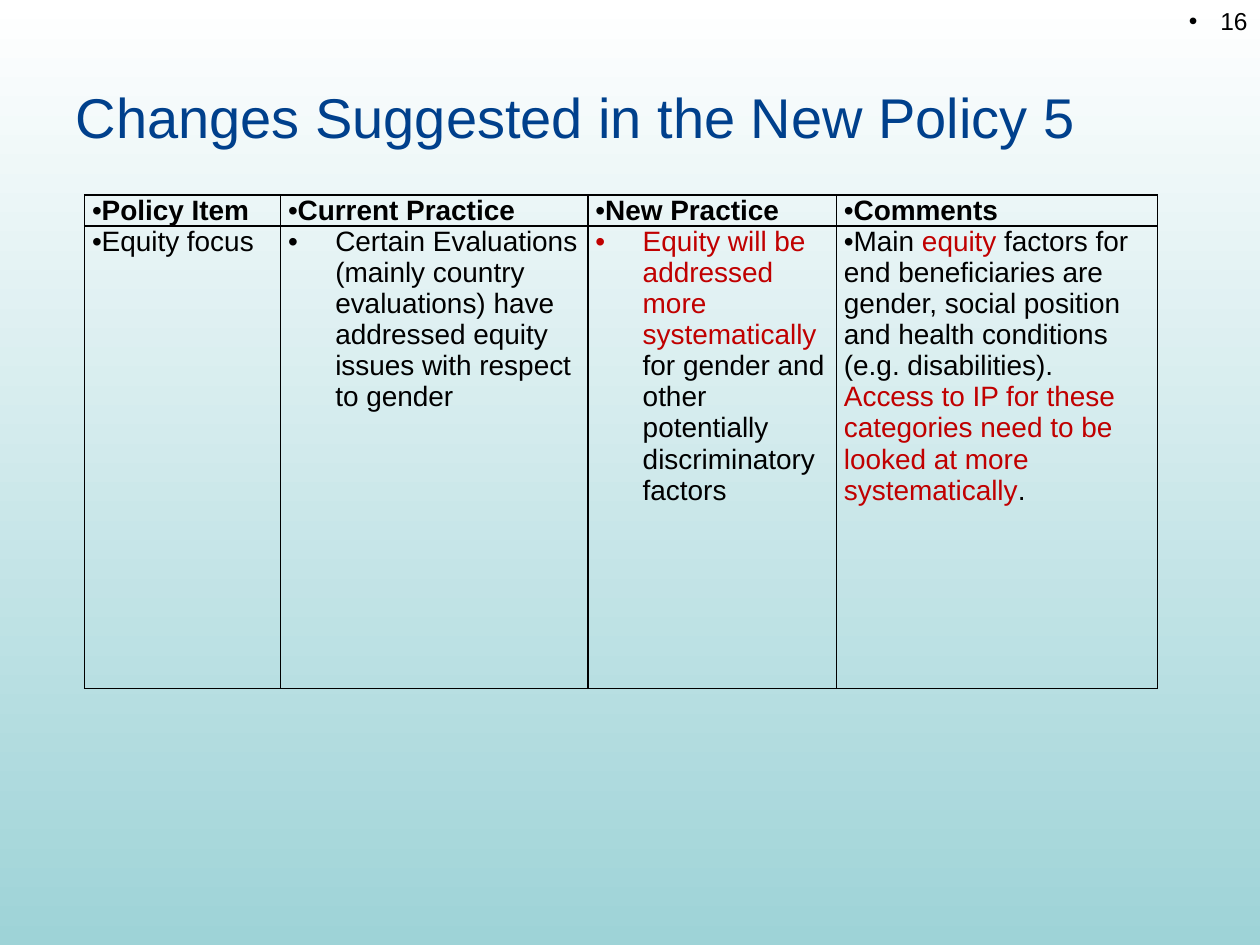
from dataclasses import dataclass

from lxml.etree import SubElement
from pptx import Presentation
from pptx.dml.color import RGBColor
from pptx.enum.text import MSO_ANCHOR as Anchor, MSO_AUTO_SIZE as AutoSize, PP_ALIGN as Align
from pptx.oxml.ns import qn
from pptx.util import Pt

BLACK = RGBColor(0x00, 0x00, 0x00)
RED = RGBColor(0xC0, 0x00, 0x00)
NAVY = RGBColor(0x00, 0x40, 0x8C)
TEAL = RGBColor(0x9E, 0xD3, 0xD7)
WHITE = RGBColor(0xFF, 0xFF, 0xFF)

FONT = "Arial"
COLUMN_WIDTHS = (112, 175.7, 142, 183.5)
ROW_HEIGHTS = (17.7, 264.2)
HANGING_INDENT = 27


@dataclass(frozen=True)
class TextRun:
    text: str
    color: RGBColor = BLACK
    bold: bool = False


@dataclass(frozen=True)
class CellText:
    runs: tuple[TextRun, ...]
    indent: float = 0


HEADERS = tuple(
    CellText((TextRun(label, bold=True),))
    for label in ("Policy Item", "Current Practice", "New Practice", "Comments")
)
EQUITY_ROW = (
    CellText((TextRun("Equity focus"),)),
    CellText(
        (
            TextRun(
                "Certain Evaluations (mainly country evaluations) have "
                "addressed equity issues with respect to gender"
            ),
        ),
        HANGING_INDENT,
    ),
    CellText(
        (
            TextRun("Equity will be addressed more systematically ", RED),
            TextRun("for gender and other potentially discriminatory factors "),
        ),
        HANGING_INDENT,
    ),
    CellText(
        (
            TextRun("Main "),
            TextRun("equity", RED),
            TextRun(
                " factors for end beneficiaries are gender, social position "
                "and health conditions (e.g. disabilities). "
            ),
            TextRun(
                "Access to IP for these categories need to be looked at more systematically",
                RED,
            ),
            TextRun("."),
        )
    ),
)


def add_run(paragraph, text_run: TextRun, size: float) -> None:
    run = paragraph.add_run()
    run.text = text_run.text
    run.font.name = FONT
    run.font.size = Pt(size)
    run.font.bold = text_run.bold
    run.font.color.rgb = text_run.color


def add_bullet(paragraph, indent: float) -> None:
    properties = paragraph._p.get_or_add_pPr()
    properties.set("marL", str(Pt(indent)))
    properties.set("indent", str(-Pt(indent)))
    SubElement(properties, qn("a:buFont"), typeface=FONT)
    SubElement(properties, qn("a:buChar"), char="•")


def add_borders(cell) -> None:
    properties = cell._tc.get_or_add_tcPr()
    for position, side in enumerate(("lnL", "lnR", "lnT", "lnB")):
        line = SubElement(properties, qn(f"a:{side}"), w=str(Pt(1)))
        fill = SubElement(line, qn("a:solidFill"))
        SubElement(fill, qn("a:srgbClr"), val=str(BLACK))
        properties.insert(position, line)


def fill_cell(cell, content: CellText) -> None:
    cell.fill.background()
    add_borders(cell)
    cell.margin_left = cell.margin_right = Pt(4.3)
    cell.margin_top = cell.margin_bottom = Pt(0)
    cell.vertical_anchor = Anchor.TOP
    paragraph = cell.text_frame.paragraphs[0]
    paragraph.alignment = Align.LEFT
    add_bullet(paragraph, content.indent)
    for text_run in content.runs:
        add_run(paragraph, text_run, 16)


def set_background(slide) -> None:
    fill = slide.background.fill
    fill.gradient()
    fill.gradient_angle = 90
    for stop, position, color in zip(fill.gradient_stops, (0, 1), (TEAL, WHITE)):
        stop.position = position
        stop.color.rgb = color


def set_title(slide) -> None:
    title = slide.shapes.title
    title.left, title.top, title.width, title.height = Pt(36), Pt(21.6), Pt(648), Pt(90)
    frame = title.text_frame
    frame.auto_size = AutoSize.NONE
    frame.vertical_anchor = Anchor.MIDDLE
    paragraph = frame.paragraphs[0]
    paragraph.alignment = Align.LEFT
    add_run(paragraph, TextRun("Changes Suggested in the New Policy 5", NAVY), 32)


def add_policy_table(slide) -> None:
    rows = (HEADERS, EQUITY_ROW)
    table = slide.shapes.add_table(
        len(rows), len(HEADERS), Pt(48.3), Pt(111.4),
        Pt(sum(COLUMN_WIDTHS)), Pt(sum(ROW_HEIGHTS)),
    ).table
    table.first_row = table.horz_banding = False
    for column, width in zip(table.columns, COLUMN_WIDTHS):
        column.width = Pt(width)
    for row, height, contents in zip(table.rows, ROW_HEIGHTS, rows):
        row.height = Pt(height)
        for cell, content in zip(row.cells, contents):
            fill_cell(cell, content)


def add_page_number(slide) -> None:
    frame = slide.shapes.add_textbox(Pt(552), Pt(0), Pt(168), Pt(37.5)).text_frame
    frame.word_wrap = True
    paragraph = frame.paragraphs[0]
    paragraph.alignment = Align.RIGHT
    add_bullet(paragraph, 18)
    add_run(paragraph, TextRun("16"), 14)


def main() -> None:
    presentation = Presentation()
    presentation.slide_width, presentation.slide_height = Pt(720), Pt(540)
    slide = presentation.slides.add_slide(presentation.slide_layouts[5])
    set_background(slide)
    set_title(slide)
    add_policy_table(slide)
    add_page_number(slide)
    presentation.save("out.pptx")


if __name__ == "__main__":
    main()
